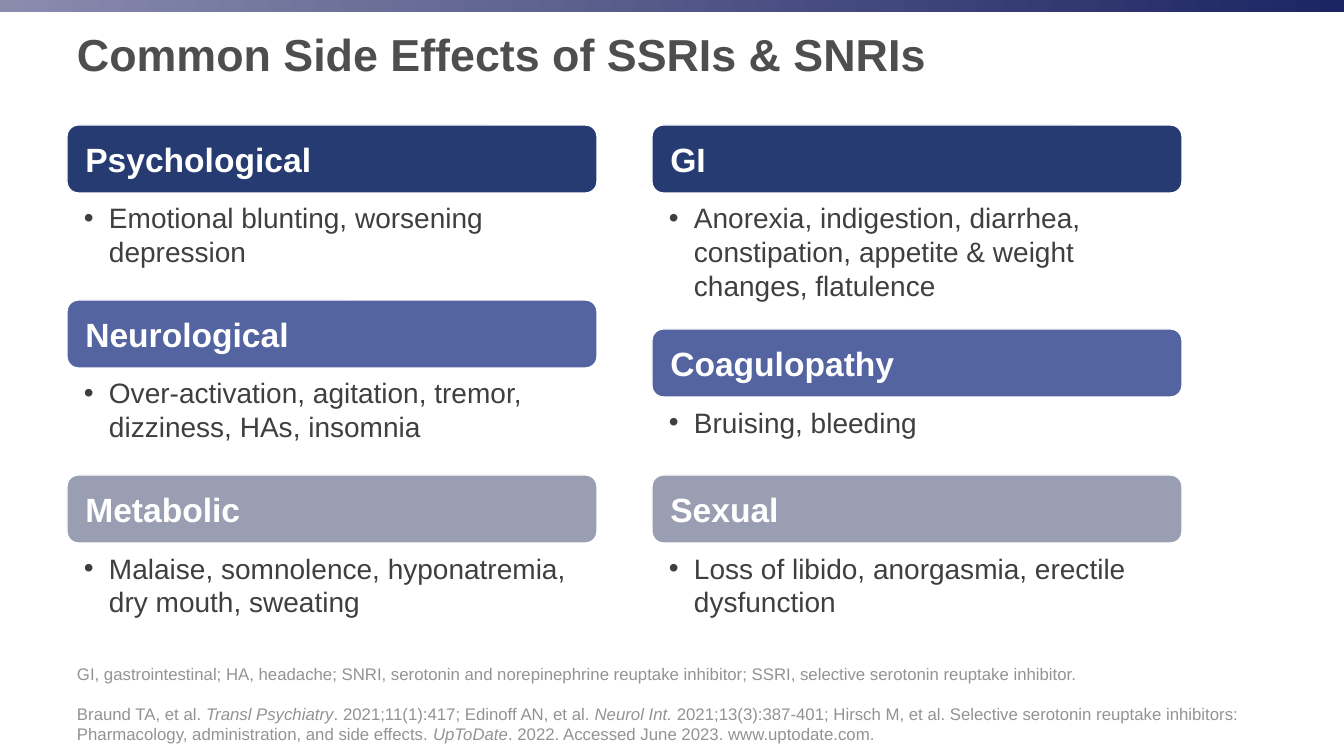
from pptx import Presentation
from pptx.dml.color import RGBColor
from pptx.enum.shapes import MSO_SHAPE as Shape
from pptx.enum.text import MSO_ANCHOR as Anchor, PP_ALIGN as Align
from pptx.oxml.ns import qn
from pptx.util import Pt
from lxml.etree import SubElement

EMU_PER_PX = 914400 / 100.8
FONT = "Arial"
COLORS = {
    "bar_start": "898CAD", "bar_end": "1C2463", "title": "4D4E4D",
    "note": "939393", "body": "3F3F3F", "white": "FFFFFF",
    "navy": "273B73", "blue": "5364A0", "gray": "9A9EB3",
}


def px(length):
    return round(length * EMU_PER_PX)


def color(name):
    return RGBColor.from_string(COLORS[name])


class SideEffectsSlide:
    def __init__(self, deck):
        self.shapes = deck.slides.add_slide(deck.slide_layouts[6]).shapes

    def add_runs(self, paragraph, runs, size, ink, bold=False):
        for text, italic in runs:
            run = paragraph.add_run()
            run.text = text
            font = run.font
            font.name, font.size = FONT, Pt(size)
            font.bold, font.italic = bold, italic
            font.color.rgb = color(ink)

    def frame(self, shape, insets, anchor):
        frame = shape.text_frame
        frame.word_wrap = True
        frame.vertical_anchor = anchor
        (frame.margin_left, frame.margin_top,
         frame.margin_right, frame.margin_bottom) = map(px, insets)
        return frame

    def text(self, box, paragraphs, size, ink, bold=False,
             insets=(10, 5, 10, 5), anchor=Anchor.TOP, gap=0):
        frame = self.frame(self.shapes.add_textbox(*map(px, box)), insets, anchor)
        for index, runs in enumerate(paragraphs):
            paragraph = frame.add_paragraph() if index else frame.paragraphs[0]
            if index:
                paragraph.space_before = Pt(gap)
            self.add_runs(paragraph, runs, size, ink, bold)
        return frame

    def top_bar(self, box):
        bar = self.shapes.add_shape(Shape.RECTANGLE, *map(px, box))
        bar.shadow.inherit = False
        bar.line.fill.background()
        bar.fill.gradient()
        bar.fill.gradient_angle = 0
        for stop, name, place in zip(bar.fill.gradient_stops, ("bar_start", "bar_end"), (0, 1)):
            stop.color.rgb = color(name)
            stop.position = place

    def heading(self, box, label, fill):
        banner = self.shapes.add_shape(Shape.ROUNDED_RECTANGLE, *map(px, box))
        banner.shadow.inherit = False
        banner.fill.solid()
        banner.fill.fore_color.rgb = color(fill)
        banner.line.color.rgb = color("white")
        banner.line.width = Pt(1)
        paragraph = self.frame(banner, (15, 15, 15, 15), Anchor.MIDDLE).paragraphs[0]
        paragraph.alignment = Align.LEFT
        self.add_runs(paragraph, [(label, False)], 24, "white", True)

    def bullet(self, box, effects):
        frame = self.text(box, [[(effects, False)]], 20, "body", insets=(17, 3, 16, 3))
        properties = frame.paragraphs[0]._p.get_or_add_pPr()
        properties.set("marL", str(px(25)))
        properties.set("indent", str(px(-25)))
        SubElement(properties, qn("a:buFont")).set("typeface", FONT)
        SubElement(properties, qn("a:buChar")).set("char", "•")


def main():
    deck = Presentation()
    deck.slide_width, deck.slide_height = px(1344), px(756)
    slide = SideEffectsSlide(deck)

    slide.top_bar((0, 0, 1344, 12))
    slide.text((67, 22, 1184, 131), [[("Common Side Effects of SSRIs & SNRIs", False)]],
               32, "title", True)

    columns = {
        67: [
            (125, "Psychological", "Emotional blunting, worsening depression"),
            (300, "Neurological", "Over-activation, agitation, tremor, dizziness, HAs, insomnia"),
            (475, "Metabolic", "Malaise, somnolence, hyponatremia, dry mouth, sweating"),
        ],
        652: [
            (125, "GI", "Anorexia, indigestion, diarrhea, constipation, "
                        "appetite & weight changes, flatulence"),
            (329, "Coagulopathy", "Bruising, bleeding"),
            (475, "Sexual", "Loss of libido, anorgasmia, erectile dysfunction"),
        ],
    }
    for left, categories in columns.items():
        for (top, label, effects), fill in zip(categories, ("navy", "blue", "gray")):
            slide.heading((left, top, 530, 68), label, fill)
            slide.bullet((left, top + 73, 530, 102), effects)

    abbreviations = [("GI, gastrointestinal; HA, headache; SNRI, serotonin and norepinephrine "
                      "reuptake inhibitor; SSRI, selective serotonin reuptake inhibitor.", False)]
    references = [
        ("Braund TA, et al. ", False),
        ("Transl Psychiatry", True),
        (". 2021;11(1):417; Edinoff AN, et al. ", False),
        ("Neurol Int. ", True),
        ("2021;13(3):387-401; Hirsch M, et al. Selective serotonin reuptake inhibitors: "
         "Pharmacology, administration, and side effects. ", False),
        ("UpToDate", True),
        (". 2022. Accessed June 2023. www.uptodate.com.", False),
    ]
    slide.text((67, 701, 1184, 48), [abbreviations, references], 12, "note",
               anchor=Anchor.BOTTOM, gap=14)
    deck.save("out.pptx")


if __name__ == "__main__":
    main()
